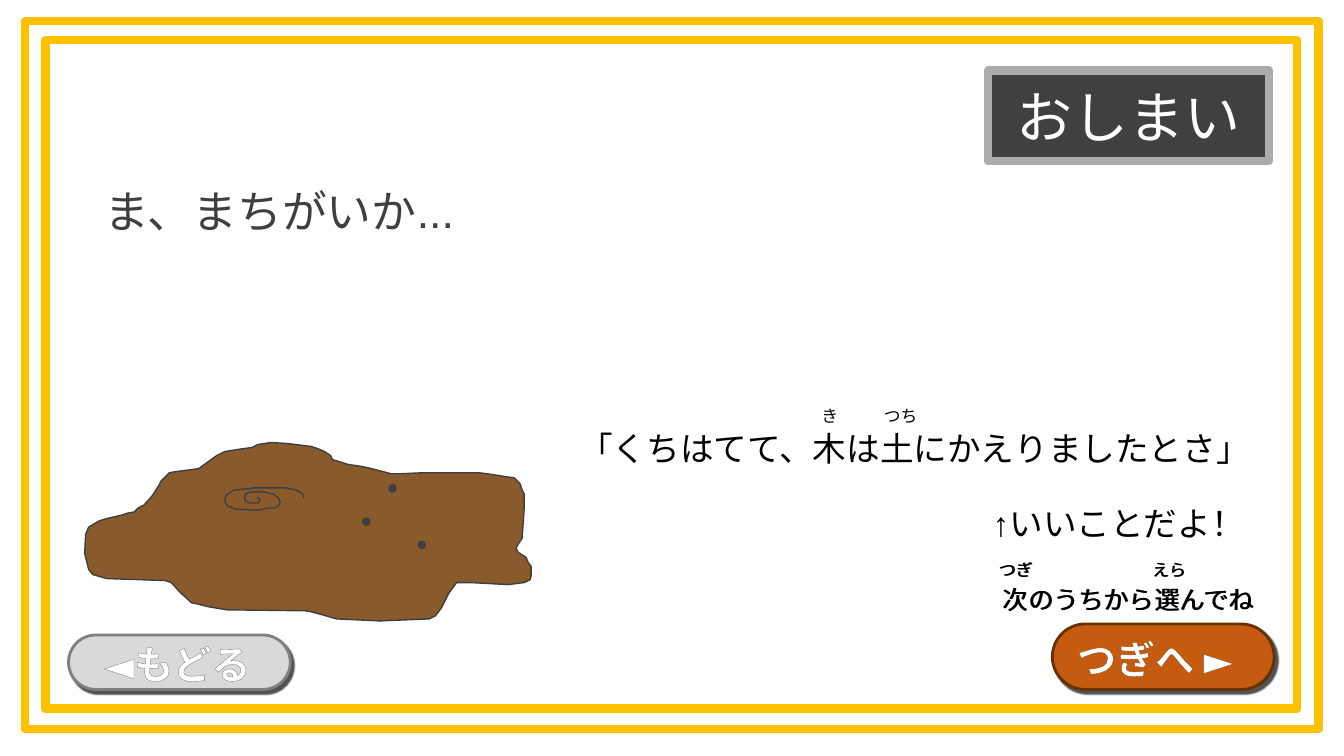
from lxml import etree
from pptx import Presentation
from pptx.dml.color import RGBColor
from pptx.enum.shapes import MSO_SHAPE
from pptx.enum.text import MSO_ANCHOR, MSO_AUTO_SIZE, PP_ALIGN
from pptx.oxml.ns import qn
from pptx.util import Inches, Pt

RECTANGLE, OVAL, PILL = MSO_SHAPE.RECTANGLE, MSO_SHAPE.OVAL, MSO_SHAPE.ROUNDED_RECTANGLE
CENTER, MIDDLE, GROW = PP_ALIGN.CENTER, MSO_ANCHOR.MIDDLE, MSO_AUTO_SIZE.SHAPE_TO_FIT_TEXT

CELL = Inches(0.1)  # one column or row of the slide grid
COLUMNS, ROWS = 133.33, 75

BLACK = RGBColor(0x00, 0x00, 0x00)
WHITE = RGBColor(0xFF, 0xFF, 0xFF)
INK = RGBColor(0x3F, 0x3F, 0x3F)
GOLD = RGBColor(0xFF, 0xC0, 0x00)
SIGN_FILL = RGBColor(0x40, 0x40, 0x40)
SIGN_EDGE = RGBColor(0xAE, 0xAB, 0xAB)
WOOD = RGBColor(0x88, 0x5A, 0x2C)
BACK_FILL = RGBColor(0xD9, 0xD9, 0xD9)
BACK_EDGE = RGBColor(0x80, 0x80, 0x80)
NEXT_FILL = RGBColor(0xC5, 0x5A, 0x11)
NEXT_EDGE = RGBColor(0x66, 0x33, 0x00)
NEXT_OUTLINE = RGBColor(0x8E, 0x47, 0x00)

BODY_FONT, BUTTON_FONT = "Arial", "Noto Sans CJK JP"

# Outline points in tenths of a grid cell
LOG = [
    (197, 465), (215, 452), (223, 448), (242, 445), (250, 444), (256, 441), (269, 439),
    (285, 440), (309, 443), (315, 445), (322, 448), (328, 452), (330, 456), (346, 461),
    (354, 462), (360, 463), (369, 465), (388, 470), (398, 470), (420, 469), (475, 469),
    (483, 470), (496, 472), (502, 473), (510, 474), (516, 480), (518, 486), (520, 490),
    (520, 505), (518, 534), (514, 540), (512, 544), (514, 548), (522, 553), (524, 558),
    (527, 562), (527, 571), (526, 575), (520, 578), (504, 580), (467, 578), (453, 578),
    (445, 589), (438, 603), (432, 611), (426, 614), (377, 616), (334, 614), (320, 610),
    (309, 607), (303, 606), (225, 605), (207, 602), (195, 599), (190, 598), (178, 587),
    (170, 578), (164, 576), (106, 574), (92, 570), (88, 565), (84, 549), (85, 530),
    (88, 523), (98, 517), (104, 515), (121, 511), (127, 509), (133, 508), (137, 504),
    (143, 501), (151, 492), (158, 481), (160, 477), (168, 469), (174, 468),
]
SWIRL = [
    (254, 494), (257, 494), (258, 496), (256, 499), (248, 499), (244, 497), (243, 496),
    (243, 491), (246, 489), (250, 488), (263, 488), (265, 489), (271, 490), (276, 494),
    (278, 497), (277, 501), (274, 503), (272, 504), (266, 504), (256, 506), (253, 506),
    (233, 505), (229, 503), (226, 502), (223, 497), (224, 492), (225, 491), (229, 488),
    (231, 487), (233, 486), (236, 486), (242, 485), (248, 485), (251, 484), (262, 484),
    (284, 484), (286, 485), (289, 485), (293, 486), (295, 487), (299, 489), (300, 490),
    (301, 493), (301, 494),
]
KNOTS = [(36, 51.4), (38.6, 48.1), (41.5, 53.7)]


def grid(*cells):
    return [round(cell * CELL) for cell in cells]


def apply_format(target, values):
    for name, value in values.items():
        setattr(target, name, value)


def style_shape(shape, fill, edge, width):
    shape.shadow.inherit = False
    if fill is None:
        shape.fill.background()
    else:
        shape.fill.solid()
        shape.fill.fore_color.rgb = fill
    shape.line.color.rgb = edge
    shape.line.width = Pt(width)
    return shape


def add_box(shapes, kind, box, fill, edge, width):
    return style_shape(shapes.add_shape(kind, *grid(*box)), fill, edge, width)


def add_outline(shapes, points, closed, fill):
    builder = shapes.build_freeform(*points[0], scale=CELL / 10)
    builder.add_line_segments(points[1:], close=closed)
    return style_shape(builder.convert_to_shape(), fill, INK, 1)


def add_run(paragraph, text, size, color, font=BODY_FONT, bold=None):
    run = paragraph.add_run()
    run.text = text
    apply_format(run.font, {"size": Pt(size), "name": font, "bold": bold})
    run.font.color.rgb = color
    etree.SubElement(run.font._element, qn("a:ea"), typeface=font)
    return run


def outline_letters(run, color, width):
    line = etree.Element(qn("a:ln"), w=str(Pt(width)))
    fill = etree.SubElement(line, qn("a:solidFill"))
    etree.SubElement(fill, qn("a:srgbClr"), val=str(color))
    run.font._element.insert(0, line)


def add_text_frame(shapes, box):
    frame = shapes.add_textbox(*grid(*box)).text_frame
    apply_format(frame, {"word_wrap": True, "auto_size": GROW})
    return frame


def add_text(shapes, box, text, size, color=BLACK, spacing=None):
    paragraph = add_text_frame(shapes, box).paragraphs[0]
    paragraph.line_spacing = spacing
    add_run(paragraph, text, size, color)


def add_drop_shadow(shape):
    effects = shape._element.spPr.find(qn("a:effectLst"))
    shadow = etree.SubElement(effects, qn("a:outerShdw"), blurRad=str(Pt(1)),
                              dist=str(Pt(3)), dir=str(50 * 60000), rotWithShape="0")
    color = etree.SubElement(shadow, qn("a:srgbClr"), val=str(BLACK))
    etree.SubElement(color, qn("a:alpha"), val="68000")


def add_button(shapes, box, fill, edge, label_box, outline, parts, margin_right):
    pill = add_box(shapes, PILL, box, fill, edge, 2)
    pill.adjustments[0] = 0.5
    add_drop_shadow(pill)
    frame = add_text_frame(shapes, label_box)
    frame.margin_right = grid(margin_right)[0]
    paragraph = frame.paragraphs[0]
    paragraph.alignment = CENTER
    for text, width in parts:
        run = add_run(paragraph, text, 28, WHITE, BUTTON_FONT, True)
        outline_letters(run, outline, width)


def add_rotten_log(shapes):
    parts = shapes.add_group_shape().shapes
    add_outline(parts, LOG, True, WOOD)
    for left, top in KNOTS:
        add_box(parts, OVAL, (left, top, 0.7, 0.7), INK, INK, 1)
    add_outline(parts, SWIRL, False, None)


def add_sign(shapes):
    sign = add_box(shapes, RECTANGLE, (98, 7, 27.9, 9), SIGN_FILL, SIGN_EDGE, 6)
    sign.text_frame.vertical_anchor = MIDDLE
    paragraph = sign.text_frame.paragraphs[0]
    paragraph.alignment = CENTER
    add_run(paragraph, "おしまい", 40, WHITE)


def add_choice_hint(shapes):
    """Two layers, slightly apart, thicken the letters."""
    for shift in (0, 0.1):
        add_text(shapes, (98.6 - shift, 57.5, 27.9, 4), "次のうちから選んでね", 18)
        add_text(shapes, (113.4 - shift, 55, 6.5, 3), "えら", 12)
        add_text(shapes, (98.1 + shift, 55, 5.4, 3), "つぎ", 12)


def main():
    presentation = Presentation()
    presentation.slide_width, presentation.slide_height = grid(COLUMNS, ROWS)
    shapes = presentation.slides.add_slide(presentation.slide_layouts[6]).shapes

    for frame in ((2.5, 2.1, 128.3, 70.2), (4.5, 4, 124.2, 66.3)):
        add_box(shapes, RECTANGLE, frame, None, GOLD, 6)
    add_text(shapes, (9.4, 15.1, 78.3, 9.1), "ま、まちがいか...", 32, INK, 1.5)
    add_text(shapes, (56.5, 42, 71.4, 5), "「くちはてて、木は土にかえりましたとさ」", 24)
    add_text(shapes, (97.5, 49.4, 30.3, 5), "↑いいことだよ！", 24)
    add_rotten_log(shapes)
    add_sign(shapes)
    add_button(shapes, (6.8, 63, 22, 5.4), BACK_FILL, BACK_EDGE, (6.6, 63, 22, 5.7),
               BACK_EDGE, [("◄", 1), ("もどる", 1.5)], 1)
    add_button(shapes, (104.4, 61.9, 22, 6.5), NEXT_FILL, NEXT_EDGE, (104.4, 62.5, 22, 5.7),
               NEXT_OUTLINE, [("つぎ", 1), ("へ ", 1.5), ("►", 1)], 2.6)
    add_text(shapes, (80.5, 39.8, 8.2, 3), "き", 12)
    add_text(shapes, (86.7, 39.8, 8.2, 3), "つち", 12)
    add_choice_hint(shapes)
    presentation.save("out.pptx")


if __name__ == "__main__":
    main()
